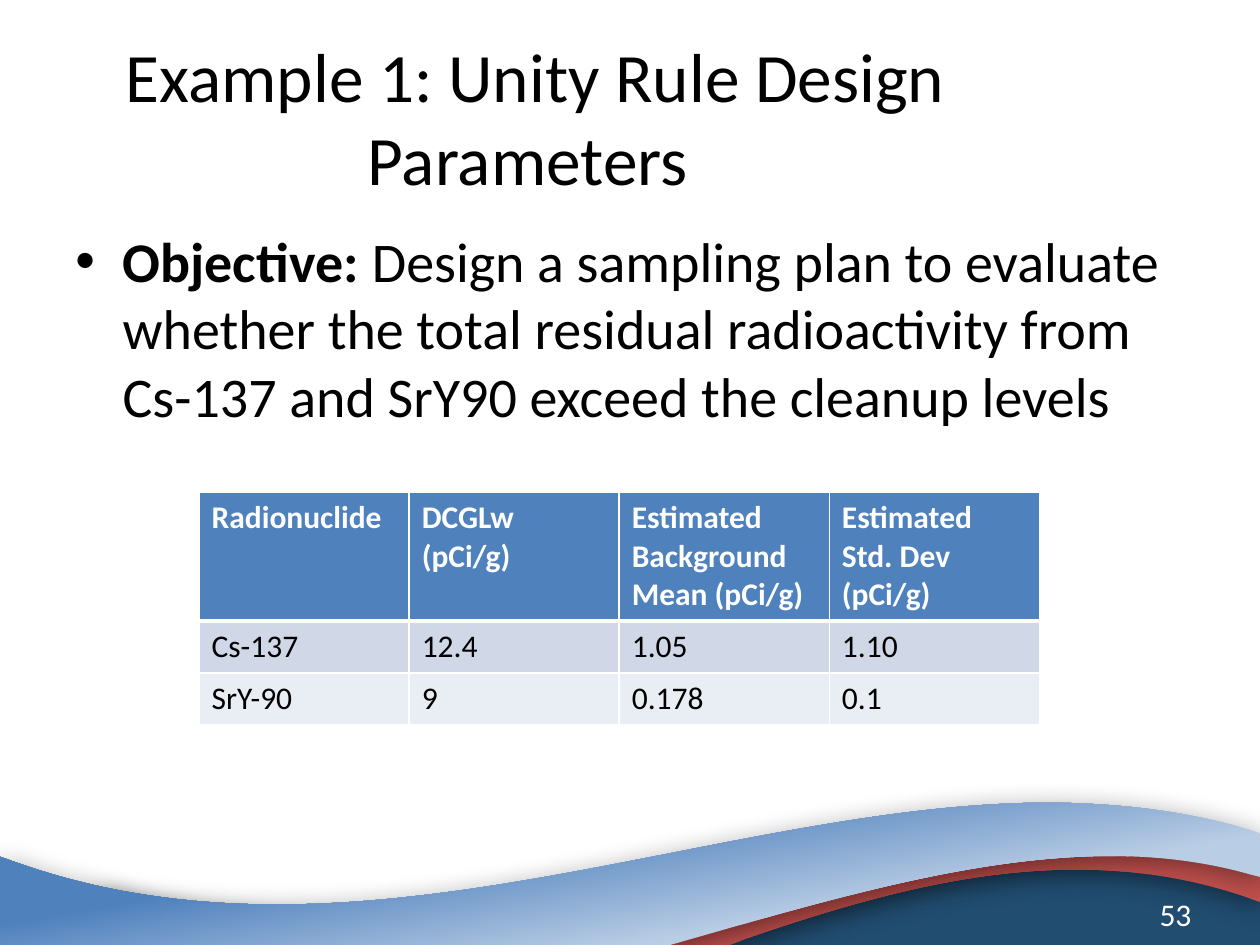
from lxml.etree import SubElement
from pptx import Presentation
from pptx.dml.color import RGBColor
from pptx.enum.text import MSO_ANCHOR, PP_ALIGN
from pptx.oxml.ns import qn
from pptx.util import Inches, Pt

FONT = "Calibri"
COLORS = {
    "black": "000000", "white": "FFFFFF", "header": "4F81BD",
    "odd row": "D0D8E8", "even row": "E9EDF4",
    "sky": "558ED5", "navy": "214D71", "red": "C0504D", "dark red": "953735",
    "pale blue": "B9CDE5", "blue": "4F81BD",
}

TITLE = "Example 1: Unity Rule Design Parameters "
OBJECTIVE = [
    ("Objective: ", True),
    ("Design a sampling plan to evaluate whether the total residual "
     "radioactivity from Cs-137 and SrY90 exceed the cleanup levels", False),
]
PAGE_NUMBER = "53"
TABLE = [
    ["Radionuclide", "DCGLw (pCi/g)", "Estimated Background Mean (pCi/g)", "Estimated Std. Dev (pCi/g)"],
    ["Cs-137", "12.4", "1.05", "1.10"],
    ["SrY-90", "9", "0.178", "0.1"],
]
ROW_HEIGHTS = [1.02, 0.41, 0.41]
ROW_FILLS = ["header", "odd row", "even row"]

# Each outline step is a line (x, y) or a Bezier curve (x1, y1, x2, y2, x, y)
WAVES = [
    {"stops": [(0.21, "sky"), (0.51, "navy")], "angle": 60,
     "outline": [(0.79, 7.08), (2.91, 7.42, 3.56, 7.5, 7.23, 6.73),
                 (8.77, 6.73, 10, 6.71, 10, 6.95), (10, 7.5), (0.79, 7.5)]},
    {"stops": [(0.28, "red"), (0.62, "dark red")], "angle": 260,
     "outline": [(8.45, 6.65), (8.54, 6.64, 8.62, 6.65, 8.7, 6.65),
                 (9.13, 6.66, 9.54, 6.7, 9.92, 6.79), (10, 6.81), (10, 7.16),
                 (9.89, 7.12), (8.54, 6.66, 7.22, 7, 5.92, 7.45), (5.79, 7.5),
                 (0.79, 7.5), (0.79, 7.04), (0.8, 7.04),
                 (2.64, 7.84, 5.86, 6.67, 8.45, 6.65)]},
    {"stops": [(0.3, "pale blue"), (0.67, "blue")], "angle": 260,
     "outline": [(8.37, 6.37), (8.92, 6.38, 9.46, 6.44, 9.99, 6.61), (10, 6.62),
                 (10, 6.96), (9.92, 6.94), (8.69, 6.59, 7.32, 6.93, 5.88, 7.34),
                 (5.32, 7.5), (0, 7.5), (0, 6.8), (0.17, 6.86),
                 (2.89, 7.8, 5.74, 6.36, 8.37, 6.37)]},
]


def rgb(name):
    return RGBColor.from_string(COLORS[name])


def style(font, size, color="black", bold=False):
    font.name, font.size, font.bold = FONT, Pt(size), bold
    font.color.rgb = rgb(color)


def bend(shape, steps):
    """Turn the straight segments that belong to curve steps into Bezier curves."""
    segments = list(shape._element.iter(qn("a:lnTo")))
    for segment, step in zip(segments, steps):
        if len(step) == 2:
            continue
        segment.tag = qn("a:cubicBezTo")
        end = segment[0]
        for x, y in (step[:2], step[2:4]):
            control = SubElement(segment, qn("a:pt"))
            control.set("x", str(Inches(x) - shape.left))
            control.set("y", str(Inches(y) - shape.top))
        segment.append(end)


def add_shadow(shape):
    shape.shadow.inherit = False
    effects = shape._element.spPr.find(qn("a:effectLst"))
    shadow = SubElement(effects, qn("a:outerShdw"), blurRad=str(Pt(15)),
                        dist=str(Pt(3)), dir="5400000", algn="t", rotWithShape="0")
    color = SubElement(shadow, qn("a:srgbClr"), val=COLORS["black"])
    SubElement(color, qn("a:alpha"), val="40000")


def add_wave(page, wave):
    start, *steps = wave["outline"]
    builder = page.shapes.build_freeform(Inches(start[0]), Inches(start[1]))
    builder.add_line_segments([(Inches(step[-2]), Inches(step[-1])) for step in steps], close=True)
    shape = builder.convert_to_shape()
    bend(shape, steps)
    shape.line.fill.background()
    shape.fill.gradient()
    shape.fill.gradient_angle = 360 - wave["angle"]
    for stop, (position, color) in zip(shape.fill.gradient_stops, wave["stops"]):
        stop.position = position
        stop.color.rgb = rgb(color)
    add_shadow(shape)


def add_text(page, left, top, width, height):
    box = page.shapes.add_textbox(Inches(left), Inches(top), Inches(width), Inches(height))
    box.text_frame.word_wrap = True
    return box.text_frame


def add_borders(cell, top, bottom):
    properties = cell._tc.get_or_add_tcPr()
    for side, width in (("L", 1), ("R", 1), ("T", top), ("B", bottom)):
        line = SubElement(properties, qn(f"a:ln{side}"), w=str(Pt(width)))
        fill = SubElement(line, qn("a:solidFill"))
        SubElement(fill, qn("a:srgbClr"), val=COLORS["white"])


def add_nuclide_table(page):
    table = page.shapes.add_table(len(TABLE), len(TABLE[0]), Inches(1.58), Inches(3.91),
                                  Inches(6.67), Inches(sum(ROW_HEIGHTS))).table
    for r, values in enumerate(TABLE):
        table.rows[r].height = Inches(ROW_HEIGHTS[r])
        for c, value in enumerate(values):
            cell = table.cell(r, c)
            add_borders(cell, top=3 if r == 1 else 1, bottom=3 if r == 0 else 1)
            cell.fill.solid()
            cell.fill.fore_color.rgb = rgb(ROW_FILLS[r])
            cell.text_frame.text = value
            style(cell.text_frame.paragraphs[0].runs[0].font, 18,
                  "white" if r == 0 else "black", r == 0)


def main():
    deck = Presentation()
    deck.slide_width, deck.slide_height = Inches(10), Inches(7.5)
    page = deck.slides.add_slide(deck.slide_layouts[6])

    # Footer waves and page number
    for wave in WAVES:
        add_wave(page, wave)
    number = add_text(page, 9.08, 7, 0.5, 0.5)
    number.margin_top = number.margin_bottom = Inches(0.1)
    number.text = PAGE_NUMBER
    number.paragraphs[0].alignment = PP_ALIGN.CENTER
    style(number.paragraphs[0].runs[0].font, 18, "white")

    # Title
    title = add_text(page, 0.5, 0.3, 7.5, 1.25)
    title.vertical_anchor = MSO_ANCHOR.MIDDLE
    title.text = TITLE
    title.paragraphs[0].alignment = PP_ALIGN.CENTER
    style(title.paragraphs[0].runs[0].font, 39.6)

    # Objective bullet
    para = add_text(page, 0.5, 1.75, 9, 4.95).paragraphs[0]
    properties = para._p.get_or_add_pPr()
    properties.set("marL", str(Pt(27)))
    properties.set("indent", str(-Pt(27)))
    SubElement(properties, qn("a:buFont"), typeface="Arial")
    SubElement(properties, qn("a:buChar"), char="•")
    for text, bold in OBJECTIVE:
        span = para.add_run()
        span.text = text
        style(span.font, 32, bold=bold)

    # Radionuclide parameters
    add_nuclide_table(page)
    deck.save("out.pptx")


if __name__ == "__main__":
    main()
